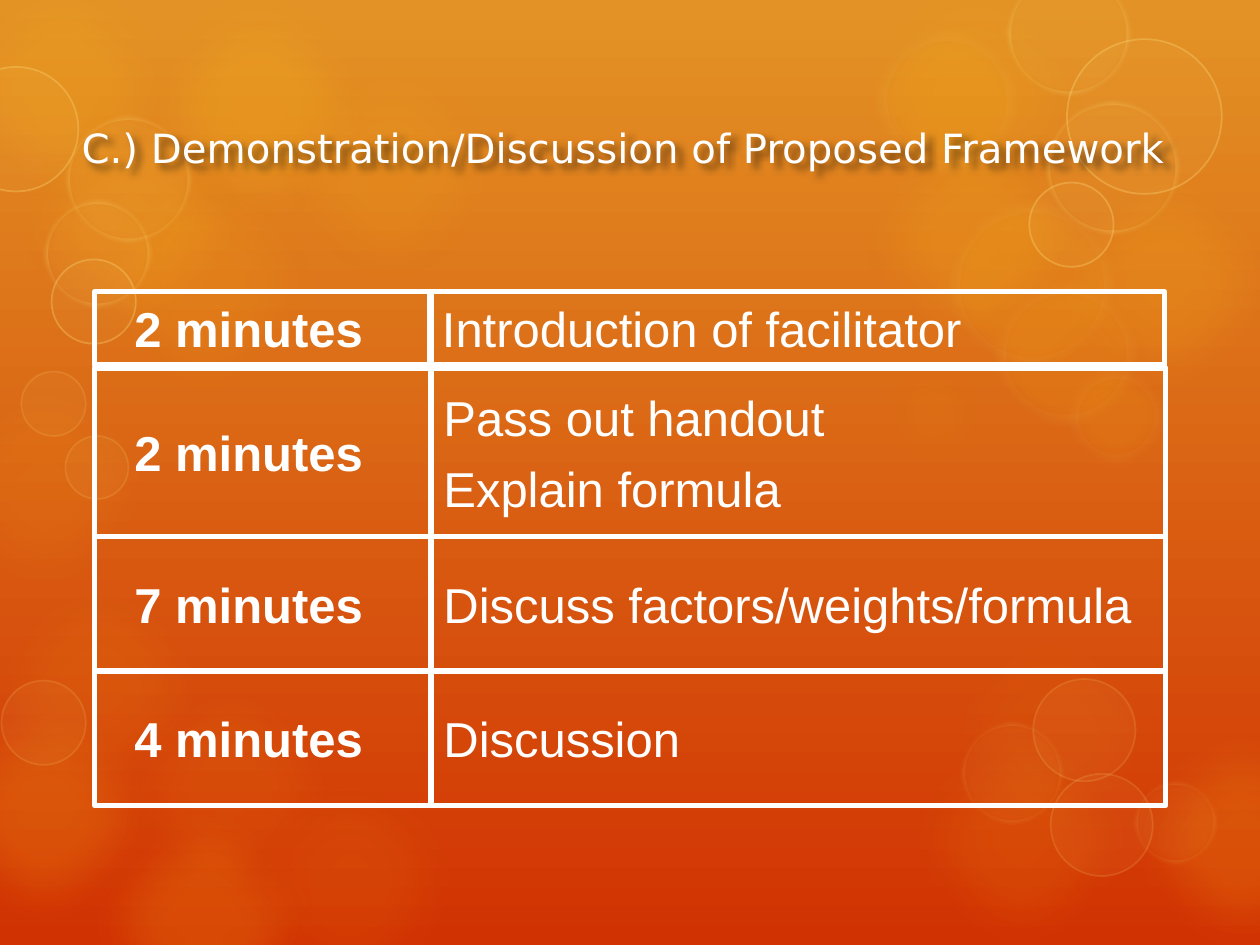
from dataclasses import dataclass

from lxml import etree
from pptx import Presentation
from pptx.dml.color import RGBColor
from pptx.enum import shapes, text
from pptx.oxml import ns
from pptx.util import Cm, Pt


@dataclass(frozen=True)
class Theme:
    top: str = "E39325"
    base: str = "D13202"
    gold: str = "FDC61B"
    pale: str = "FFE281"
    cream: str = "FEEBAE"
    ink: str = "FFFFFF"
    shade: str = "000000"
    head: str = "DejaVu Sans"
    body: str = "Arial"
    head_size: float = 23
    body_size: float = 28
    gap: float = 6.5
    rule: float = 3


@dataclass(frozen=True)
class Look:
    """Colours, line width in points and blur in cm shared by similar bubbles."""
    fill: str
    line: str = ""
    width: float = 0
    blur: float = 0


@dataclass(frozen=True)
class Bubble:
    look: Look
    left: float
    top: float
    size: float
    fill: int
    line: int = 0


@dataclass(frozen=True)
class Row:
    left: float
    top: float
    high: float
    time: str
    tasks: tuple[str, ...]


T = Theme()
WIDE, HIGH = 25.4, 19.05
GLOW = Look(T.gold, blur=0.88)
HALO = Look(T.gold, T.cream, 14, 0.35)
RING = Look(T.pale, T.pale, 1)
HAZE = Look(T.pale, T.pale, 5, 0.13)
BIG = 5.31


def glows(*spots: tuple[float, float, int]) -> list[Bubble]:
    return [Bubble(GLOW, x, y, BIG, fill) for x, y, fill in spots]


def rings(look: Look, fill: int, line: int, *spots: tuple[float, float, float]) -> list[Bubble]:
    return [Bubble(look, *spot, fill, line) for spot in spots]


BUBBLES = [
    *glows((-0.66, 11.23, 8), (1.45, 3.05, 10), (5.21, 0.79, 10), (1.45, 15.93, 16),
           (-1.42, -0.84, 14), (2.57, -0.46, 20), (0, 1.83, 15), (16.99, -0.74, 10),
           (20.83, 3.05, 15), (22.38, 14.27, 16), (18.52, 12.12, 5), (-1.74, 13.74, 16),
           (1.96, 13.31, 8), (16.99, 2.18, 15), (17.93, 14.27, 10), (4.39, 15.14, 8),
           (-1.76, 7.16, 8)),
    *rings(HALO, 10, 6, (17.63, 0.58, 2.9), (19.1, 4.04, 3.38),
           (20.04, 5.69, 2.9), (21.51, 7.39, 2.01)),
    *rings(HAZE, 5, 30, (1.32, 2.34, 2.54), (0.89, 4.04, 2.16),
           (20.29, -0.58, 2.49), (21.08, 2.03, 2.69)),
    *rings(HAZE, 5, 15, (19.38, 14.55, 2.06), (22.86, 15.75, 1.68)),
    *rings(RING, 5, 30, (-0.93, 1.35, 2.51), (1.04, 5.23, 1.7),
           (21.51, 0.79, 3.12), (20.75, 3.68, 1.7)),
    *rings(RING, 5, 15, (0.03, 13.72, 1.7), (21.18, 15.6, 2.06), (20.83, 13.69, 2.06),
           (0.43, 7.49, 1.3), (1.32, 8.79, 1.27)),
    Bubble(GLOW, 17.15, 6.65, 3.38, 10),
]

ROWS = [
    Row(8.66, 5.88, 1.48, "2 minutes", ("Introduction of facilitator",)),
    Row(8.69, 7.42, 3.4, "2 minutes", ("Pass out handout", "Explain formula")),
    Row(8.69, 10.82, 2.71, "7 minutes", ("Discuss factors/weights/formula",)),
    Row(8.69, 13.53, 2.71, "4 minutes", ("Discussion",)),
]


def rgb(code: str) -> RGBColor:
    return RGBColor.from_string(code)


def node(root, tag: str, **attrs):
    return etree.SubElement(root, ns.qn(tag), {k: str(v) for k, v in attrs.items()})


def bubble(tree, b: Bubble):
    look = b.look
    item = tree.add_shape(shapes.MSO_SHAPE.OVAL, Cm(b.left), Cm(b.top), Cm(b.size), Cm(b.size))
    item.shadow.inherit = False
    item.fill.solid()
    item.fill.fore_color.rgb = rgb(look.fill)
    if look.line:
        item.line.color.rgb = rgb(look.line)
        item.line.width = Pt(look.width)
    else:
        item.line.fill.background()
    props = item.element.spPr
    for tint, alpha in zip(props.iter(ns.qn("a:srgbClr")), (b.fill, b.line)):
        node(tint, "a:alpha", val=alpha * 1000)
    if look.blur:
        node(props.find(ns.qn("a:effectLst")), "a:softEdge", rad=Cm(look.blur))
    return item


def backdrop(slide) -> None:
    """Put the bubbles on the layout, behind everything on the slide."""
    layout = slide.slide_layout
    for spot in list(layout.placeholders):
        layout.shapes.element.remove(spot.element)
    for b in BUBBLES:
        layout.shapes.element.append(bubble(slide.shapes, b).element)


def write(para, words: str, font: str, size: float, bold: bool = False) -> None:
    run = para.add_run()
    run.text = words
    run.font.name, run.font.size, run.font.bold = font, Pt(size), bold
    run.font.color.rgb = rgb(T.ink)


def cell(tree, left: float, wide: float, row: Row, lines: tuple[str, ...],
         inset: float, bold: bool) -> None:
    box = tree.add_shape(shapes.MSO_SHAPE.RECTANGLE, Cm(left), Cm(row.top), Cm(wide), Cm(row.high))
    box.shadow.inherit = False
    box.fill.background()
    box.line.color.rgb = rgb(T.ink)
    box.line.width = Pt(T.rule)
    frame = box.text_frame
    frame.word_wrap = True
    frame.margin_left = Cm(inset)
    frame.vertical_anchor = text.MSO_ANCHOR.MIDDLE
    for i, words in enumerate(lines):
        para = frame.add_paragraph() if i else frame.paragraphs[0]
        para.alignment = text.PP_ALIGN.LEFT
        para.space_before = Pt(T.gap)
        write(para, words, T.body, T.body_size, bold)


def title(tree, words: str) -> None:
    box = tree.add_textbox(Cm(0.64), Cm(1.7), Cm(24.13), Cm(2.54))
    frame = box.text_frame
    frame.word_wrap = True
    frame.vertical_anchor = text.MSO_ANCHOR.MIDDLE
    para = frame.paragraphs[0]
    para.alignment = text.PP_ALIGN.CENTER
    write(para, words, T.head, T.head_size)
    glow = node(box.element.spPr, "a:effectLst")
    cast = node(glow, "a:outerShdw", blurRad=Cm(0.14), dist=Cm(0.14), dir=2700000)
    node(node(cast, "a:srgbClr", val=T.shade), "a:alpha", val=50000)


def main() -> None:
    deck = Presentation()
    deck.slide_width, deck.slide_height = Cm(WIDE), Cm(HIGH)
    slide = deck.slides.add_slide(deck.slide_layouts[6])
    back = slide.background.fill
    back.gradient()
    back.gradient_angle = 270
    for stop, code, place in zip(back.gradient_stops, (T.top, T.base), (0, 1)):
        stop.color.rgb, stop.position = rgb(code), place
    backdrop(slide)
    tree = slide.shapes
    title(tree, "C.) Demonstration/Discussion of Proposed Framework ")
    for row in reversed(ROWS):
        cell(tree, row.left, 14.81, row, row.tasks, 0.25, False)
        cell(tree, 1.91, 6.78, row, (row.time,), 0.8, True)
    deck.save("out.pptx")


if __name__ == "__main__":
    main()
